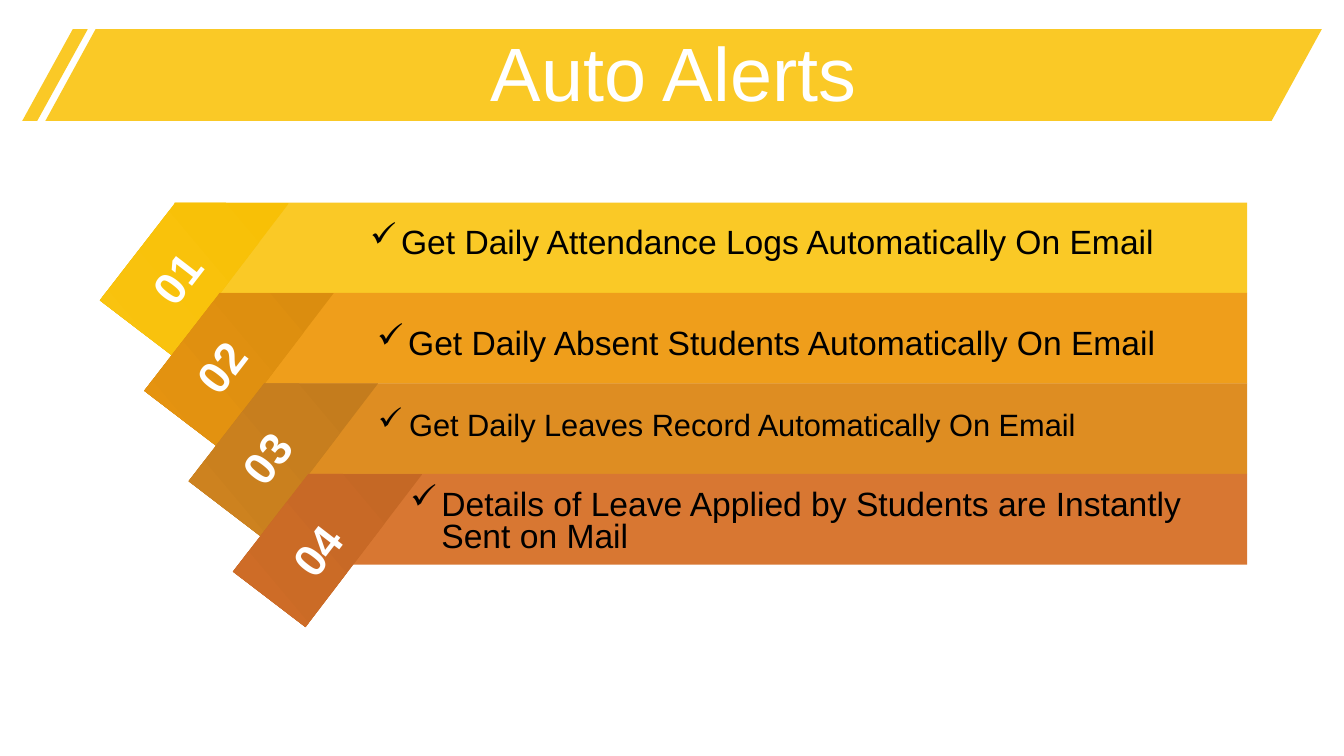
import pptx
import pptx.util
import pptx.dml.color
import pptx.enum.shapes
import pptx.enum.text
import pptx.oxml.ns
import lxml.etree

Inches = pptx.util.Inches
Pt = pptx.util.Pt
Color = pptx.dml.color.RGBColor
Shape = pptx.enum.shapes.MSO_SHAPE
Align = pptx.enum.text.PP_ALIGN
Anchor = pptx.enum.text.MSO_ANCHOR

WHITE = Color(0xFF, 0xFF, 0xFF)
BLACK = Color(0, 0, 0)
YELLOW = Color(0xFA, 0xC9, 0x26)
ORANGE = Color(0xEF, 0x9E, 0x1B)
OCHRE = Color(0xDE, 0x8D, 0x22)
RUST = Color(0xD8, 0x77, 0x32)

TITLE = "Auto Alerts"
# left, top, width, height, slant
BANNER = [(0.45, 0.29, 12.66, 0.91, 0.547), (0.22, 0.29, 0.65, 0.91, 0.771)]

# bar colour, fold gradient, number, number place, text, text box, text size
ALERTS = [
    (YELLOW, (Color(0xF8, 0xC0, 0x06), Color(0xF9, 0xC3, 0x0F)),
     "01", (1.22, 2.44),
     "Get Daily Attendance Logs Automatically On Email",
     (3.57, 2.22, 8.3, 0.42), 24),
    (ORANGE, (Color(0xDB, 0x8D, 0x0F), Color(0xE5, 0x93, 0x10)),
     "02", (1.66, 3.32),
     "Get Daily Absent Students Automatically On Email",
     (3.64, 3.22, 8.46, 0.42), 24),
    (OCHRE, (Color(0xC4, 0x7C, 0x1D), Color(0xCD, 0x82, 0x1F)),
     "03", (2.11, 4.22),
     "Get Daily Leaves Record Automatically On Email",
     (3.65, 4.05, 8.69, 0.39), 22),
    (RUST, (Color(0xC5, 0x68, 0x25), Color(0xCE, 0x6C, 0x27)),
     "04", (2.61, 5.14),
     "Details of Leave Applied by Students are Instantly Sent on Mail",
     (3.97, 4.82, 8.54, 0.75), 24),
]

FOLD = [(0, 0.97), (0.72, 1.52), (1.88, 0), (0.75, 0)]
LEFT, TOP, RIGHT = 0.99, 2.01, 12.37
SHIFT, STEP = 0.44, 0.897


def place(*box):
    return [Inches(n) for n in box]


def plain(shape):
    shape.shadow.inherit = False
    shape.line.fill.background()


def solid(kind, box, color):
    shape = slide.shapes.add_shape(kind, *place(*box))
    plain(shape)
    shape.fill.solid()
    shape.fill.fore_color.rgb = color
    return shape


def style(frame, text, size, color, bold=False):
    frame.word_wrap = True
    frame.text = text
    para = frame.paragraphs[0]
    font = para.runs[0].font
    font.name, font.size, font.bold = "Arial", Pt(size), bold
    font.color.rgb = color
    return para


def check(para):
    """Give the paragraph a hanging check-mark bullet."""
    props = para._p.get_or_add_pPr()
    props.set("marL", str(Inches(0.31)))
    props.set("indent", str(-Inches(0.31)))
    qn = pptx.oxml.ns.qn
    lxml.etree.SubElement(props, qn("a:buFont"), typeface="Wingdings")
    lxml.etree.SubElement(props, qn("a:buChar"), char="ü")


def fold(x, y, colors):
    """Draw the slanted end of a ribbon."""
    pts = [(Inches(x + dx), Inches(y + dy)) for dx, dy in FOLD]
    pen = slide.shapes.build_freeform(*pts[0])
    pen.add_line_segments(pts[1:], close=True)
    shape = pen.convert_to_shape()
    plain(shape)
    shape.fill.gradient()
    shape.fill.gradient_angle = 220
    for stop, color, pos in zip(shape.fill.gradient_stops, colors, (0, 1)):
        stop.color.rgb = color
        stop.position = pos


deck = pptx.Presentation()
deck.slide_width, deck.slide_height = place(13.33, 7.5)
slide = deck.slides.add_slide(deck.slide_layouts[5])

for *box, slant in BANNER:
    solid(Shape.PARALLELOGRAM, box, YELLOW).adjustments[0] = slant

title = slide.shapes.title
title.left, title.top, title.width, title.height = place(0.35, 0.37, 12.66, 0.79)
para = style(title.text_frame, TITLE, 54, WHITE)
para.alignment = Align.CENTER
para.line_spacing = 0.9
title.text_frame.vertical_anchor = Anchor.MIDDLE
title.element.getparent().append(title.element)

for i, (color, shades, *_) in enumerate(ALERTS):
    x, y = LEFT + SHIFT * i, TOP + STEP * i
    start = x + 0.74
    solid(Shape.RECTANGLE, (start, y, RIGHT - start, 0.9), color)
    fold(x, y, shades)

for _, _, number, spot, text, box, size in ALERTS:
    label = slide.shapes.add_textbox(*place(*spot, 1.06, 0.64))
    label.rotation = 307.5
    style(label.text_frame, number, 32, WHITE, True).alignment = Align.CENTER
    note = slide.shapes.add_textbox(*place(*box))
    para = style(note.text_frame, text, size, BLACK)
    para.line_spacing = 0.8
    check(para)

deck.save("out.pptx")
